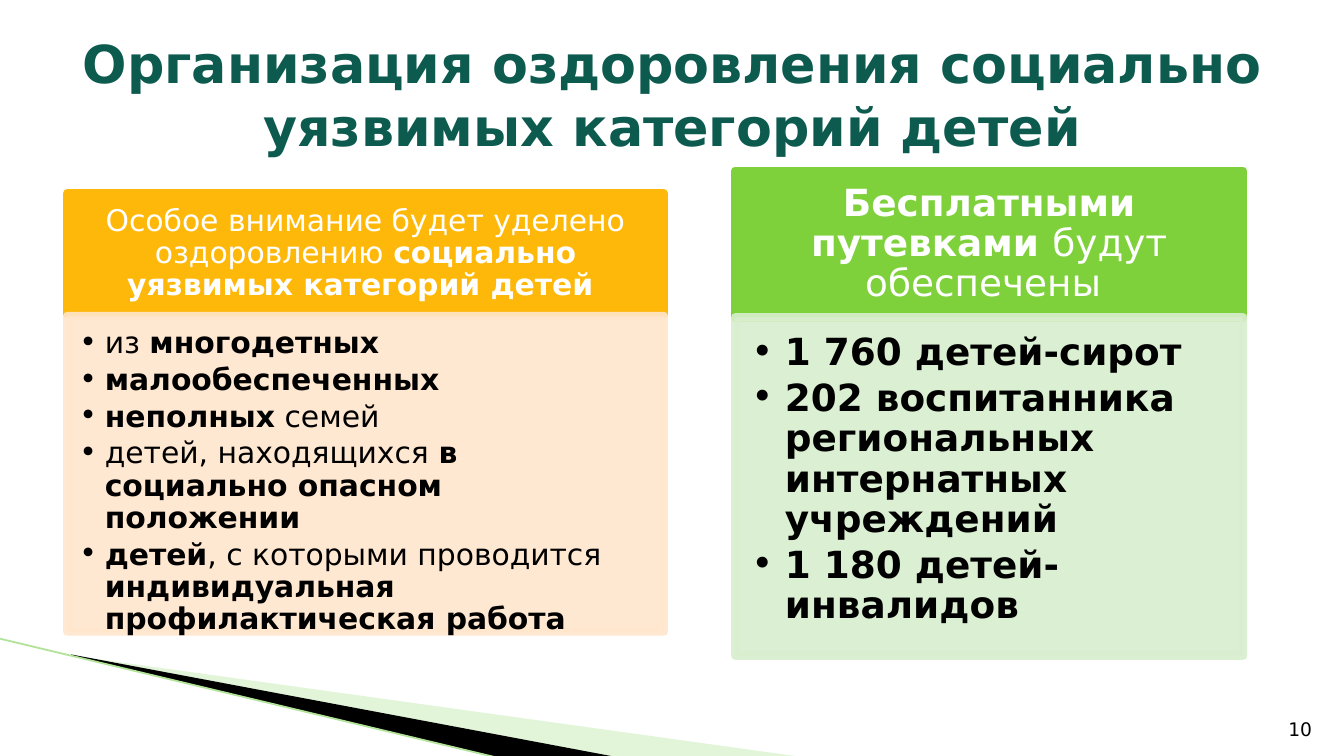
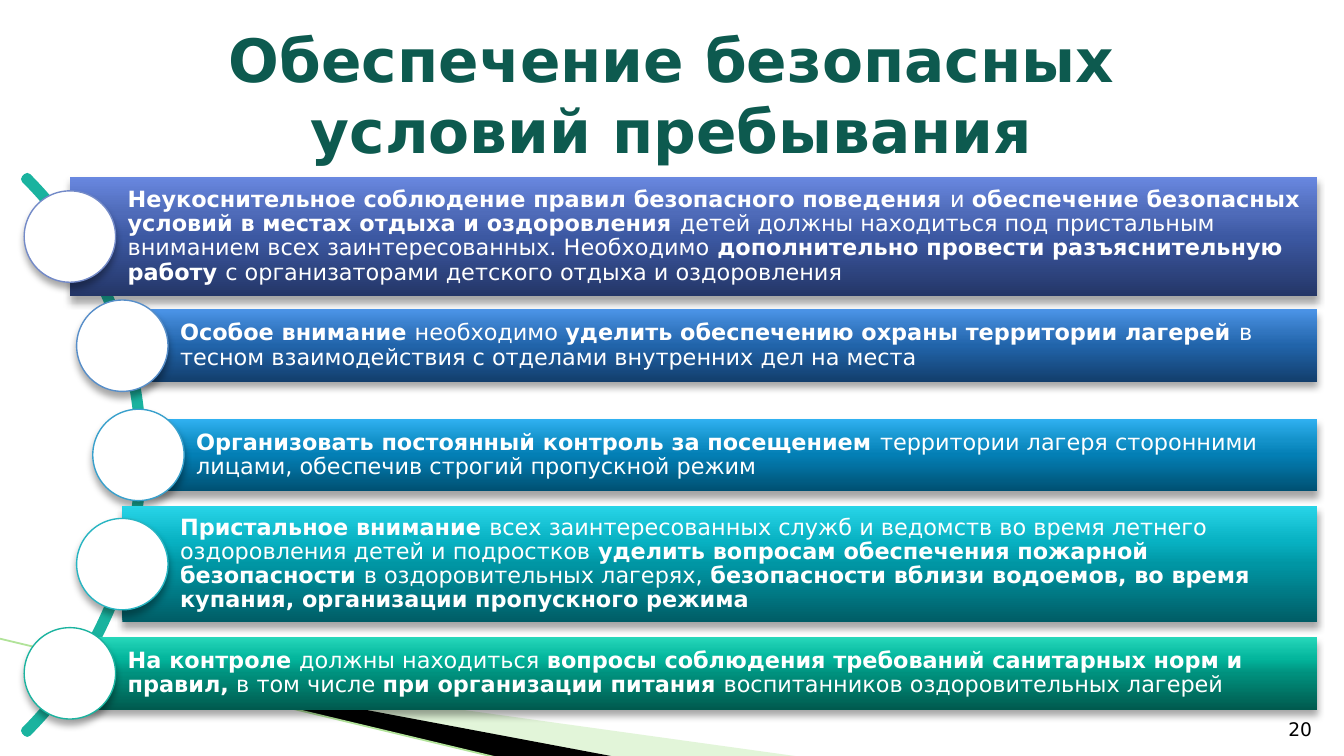
from lxml.etree import SubElement
from pptx import Presentation
from pptx.dml.color import RGBColor
from pptx.enum.shapes import MSO_CONNECTOR, MSO_SHAPE
from pptx.enum.text import MSO_ANCHOR, PP_ALIGN
from pptx.oxml.ns import qn
from pptx.util import Inches, Pt

FONT = "DejaVu Sans"
WHITE = RGBColor(0xFF, 0xFF, 0xFF)
BLACK = RGBColor(0x00, 0x00, 0x00)
TITLE_GREEN = RGBColor(0x0D, 0x5A, 0x4F)
WEDGE_GREEN = RGBColor(0xB8, 0xE7, 0xA1)
EDGE_GREEN = RGBColor(0xB1, 0xE3, 0x99)
ORANGE = RGBColor(0xFE, 0xB8, 0x0A)
PALE_ORANGE = RGBColor(0xFF, 0xE6, 0xCC)
GREEN = RGBColor(0x7F, 0xD1, 0x3B)
PALE_GREEN = RGBColor(0xD8, 0xEE, 0xCE)
ARC_TEAL = RGBColor(0x1A, 0xB3, 0x9F)

GRADIENT_STOPS = (0, 50, 70, 100)
PANEL_LINE = 4.33
BAR_RIGHT = 9.8
CIRCLE_SIZE = 0.68
FIRST_CENTER = 1.76
LAST_CENTER = 5.01

PANELS = [
    dict(
        left=0.5, width=4.44, size=16, indent=0.19,
        header_box=(1.44, 0.9), header_color=ORANGE,
        header_insets=(0.12, 0.07, 0.12, 0.07),
        header="Особое внимание будет уделено оздоровлению "
               "*социально уязвимых категорий детей *",
        body_box=(2.35, 2.35), body_color=PALE_ORANGE,
        body_insets=(0.09, 0.09, 0.12, 0.14),
        items=[
            "из *многодетных*",
            "*малообеспеченных*",
            "*неполных* семей",
            "детей, находящихся *в социально опасном положении*",
            "*детей*, с которыми проводится "
            "*индивидуальная профилактическая работа*",
        ],
    ),
    dict(
        left=5.47, width=3.78, size=20, indent=0.25,
        header_box=(1.27, 1.1), header_color=GREEN,
        header_insets=(0.16, 0.09, 0.16, 0.09),
        header="*Бесплатными путевками *будут обеспечены ",
        body_box=(2.36, 2.52), body_color=PALE_GREEN,
        body_insets=(0.12, 0.12, 0.16, 0.17),
        items=[
            "*1 760 детей-сирот*",
            "*202 воспитанника региональных интернатных учреждений*",
            "*1 180 детей-инвалидов*",
        ],
    ),
]

SAFETY_RULES = [
    (0.52, 0.89, "738AC8", ("243667", "3C58A2", "4F6BB9", "6988E0"),
     "*Неукоснительное соблюдение правил безопасного поведения *и "
     "*обеспечение безопасных условий в местах отдыха и оздоровления *"
     "детей должны находиться под пристальным вниманием всех "
     "заинтересованных. Необходимо *дополнительно провести "
     "разъяснительную работу *с организаторами детского отдыха и "
     "оздоровления"),
    (0.91, 0.54, "578EC9", ("123E6C", "2164AA", "3276C0", "4B94E7"),
     "*Особое внимание *необходимо *уделить обеспечению охраны "
     "территории лагерей *в тесном взаимодействия с отделами "
     "внутренних дел на места"),
    (1.03, 0.54, "38A0CC", ("005072", "037FB5", "1492CA", "30B1F1"),
     "*Организовать постоянный контроль за посещением *территории "
     "лагеря сторонними лицами, обеспечив строгий пропускной режим"),
    (0.91, 0.86, "27B5C2", ("005D66", "0096A4", "08B2C3", "28D4E7"),
     "*Пристальное внимание *всех заинтересованных служб и ведомств во "
     "время летнего оздоровления детей и подростков *уделить вопросам "
     "обеспечения пожарной безопасности *в оздоровительных лагерях, "
     "*безопасности вблизи водоемов, во время купания, организации "
     "пропускного режима*"),
    (0.52, 0.54, "1AB39F", ("005A4E", "00917E", "03B59C", "26D7BA"),
     "*На контроле *должны находиться *вопросы соблюдения требований "
     "санитарных норм и правил,* в том числе *при организации питания *"
     "воспитанников оздоровительных лагерей"),
]


def inches(*lengths):
    return [Inches(length) for length in lengths]


def set_opacity(element, percent):
    for color in element.iter(qn("a:srgbClr")):
        SubElement(color, qn("a:alpha"), val=str(percent * 1000))


def set_percent_after(paragraph, percent):
    paragraph.space_after = Pt(0)
    spacing = paragraph._p.pPr.find(qn("a:spcAft"))
    spacing.remove(spacing[0])
    SubElement(spacing, qn("a:spcPct"), val=str(percent * 1000))


def add_bullet(paragraph, indent):
    paragraph.level = 1
    properties = paragraph._p.get_or_add_pPr()
    properties.set("marL", str(Inches(indent)))
    properties.set("indent", str(-Inches(indent)))
    SubElement(properties, qn("a:buFont"), typeface=FONT)
    SubElement(properties, qn("a:buChar"), char="•")


def write_text(shape, *texts, size, color, align=PP_ALIGN.LEFT,
               anchor=MSO_ANCHOR.MIDDLE, insets=(0.1, 0.05, 0.1, 0.05),
               line_spacing=None, percent_after=None, indent=None):
    """Asterisks switch bold on and off."""
    frame = shape.text_frame
    frame.word_wrap = True
    frame.vertical_anchor = anchor
    (frame.margin_left, frame.margin_top,
     frame.margin_right, frame.margin_bottom) = inches(*insets)
    for index, text in enumerate(texts):
        paragraph = frame.add_paragraph() if index else frame.paragraphs[0]
        paragraph.alignment = align
        if line_spacing:
            paragraph.line_spacing = line_spacing
        if percent_after:
            set_percent_after(paragraph, percent_after)
        if indent:
            add_bullet(paragraph, indent)
        for position, part in enumerate(text.split("*")):
            if part:
                run = paragraph.add_run()
                run.text = part
                run.font.name = FONT
                run.font.size = Pt(size)
                run.font.bold = position % 2 == 1
                run.font.color.rgb = color


def add_text(slide, text, box, **text_format):
    write_text(slide.shapes.add_textbox(*inches(*box)), text, **text_format)


def add_preset(slide, preset, box, fill=None, line=None, line_width=1,
               opacity=None):
    shape = slide.shapes.add_shape(preset, *inches(*box))
    shape.shadow.inherit = False
    if fill is None:
        shape.fill.background()
    else:
        shape.fill.solid()
        shape.fill.fore_color.rgb = fill
    if line is None:
        shape.line.fill.background()
    else:
        shape.line.color.rgb = line
        shape.line.width = Pt(line_width)
    if opacity:
        set_opacity(shape._element.spPr, opacity)
    return shape


def add_gradient(shape, colors):
    shape.fill.gradient()
    gradient = shape._element.spPr.find(qn("a:gradFill"))
    stops = gradient.find(qn("a:gsLst"))
    for stop in list(stops):
        stops.remove(stop)
    for position, color in zip(GRADIENT_STOPS, colors):
        stop = SubElement(stops, qn("a:gs"), pos=str(position * 1000))
        SubElement(stop, qn("a:srgbClr"), val=color)
    gradient.find(qn("a:lin")).set("ang", str(270 * 60000))


def add_shadow(shape):
    effects = shape._element.spPr.find(qn("a:effectLst"))
    shadow = SubElement(effects, qn("a:outerShdw"), blurRad=str(Pt(4)),
                        dist=str(Pt(3)), dir=str(90 * 60000), rotWithShape="0")
    SubElement(shadow, qn("a:srgbClr"), val="000000")
    set_opacity(shadow, 35)


def add_wedge(slide, points, color, opacity=None):
    start, *others = [tuple(inches(*point)) for point in points]
    builder = slide.shapes.build_freeform(*start)
    builder.add_line_segments(others, close=True)
    wedge = builder.convert_to_shape()
    wedge.shadow.inherit = False
    wedge.fill.solid()
    wedge.fill.fore_color.rgb = color
    wedge.line.fill.background()
    if opacity:
        set_opacity(wedge._element.spPr, opacity)


def add_edge_line(slide):
    line = slide.shapes.add_connector(
        MSO_CONNECTOR.STRAIGHT, *inches(-0.01, 4.75, 3.71, 5.64))
    line.line.color.rgb = EDGE_GREEN
    line.line.width = Pt(0.95)
    SubElement(line._element.spPr, qn("a:effectLst"))


def add_base_slide(presentation, title, title_size, number):
    slide = presentation.slides.add_slide(presentation.slide_layouts[6])
    slide.background.fill.solid()
    slide.background.fill.fore_color.rgb = WHITE
    add_wedge(slide, [(0.55, 4.88), (5.95, 5.63), (4.56, 5.63)],
              WEDGE_GREEN, opacity=40)
    add_wedge(slide, [(0.53, 4.87), (4.57, 5.63), (3.72, 5.64), (0.54, 4.88)],
              BLACK)
    add_edge_line(slide)
    add_text(slide, f"*{title}*", (0.5, 0.23, 9, 0.94), size=title_size,
             color=TITLE_GREEN, align=PP_ALIGN.CENTER)
    add_text(slide, str(number), (9.46, 5.26, 0.4, 0.3), size=10, color=BLACK,
             align=PP_ALIGN.RIGHT, anchor=MSO_ANCHOR.BOTTOM)
    return slide


def add_panel(slide, left, width, size, indent, header_box, header_color,
              header_insets, header, body_box, body_color, body_insets, items):
    top, height = header_box
    heading = add_preset(slide, MSO_SHAPE.RECTANGLE, (left, top, width, height),
                         header_color, header_color, PANEL_LINE)
    write_text(heading, header, size=size, color=WHITE, align=PP_ALIGN.CENTER,
               insets=header_insets, line_spacing=0.9, percent_after=35)
    top, height = body_box
    body = add_preset(slide, MSO_SHAPE.RECTANGLE, (left, top, width, height),
                      body_color, body_color, PANEL_LINE, opacity=90)
    write_text(body, *items, size=size, color=BLACK, anchor=MSO_ANCHOR.TOP,
               insets=body_insets, line_spacing=0.9, percent_after=15,
               indent=indent)


def add_rule(slide, center, left, height, ring_color, gradient, text):
    bar = add_preset(slide, MSO_SHAPE.RECTANGLE,
                     (left, center - height / 2, BAR_RIGHT - left, height))
    add_gradient(bar, gradient)
    add_shadow(bar)
    write_text(bar, text, size=12, color=WHITE, insets=(0.43, 0.03, 0.03, 0.03),
               line_spacing=0.9, percent_after=35)
    radius = CIRCLE_SIZE / 2
    circle = add_preset(
        slide, MSO_SHAPE.OVAL,
        (left - radius, center - radius, CIRCLE_SIZE, CIRCLE_SIZE),
        WHITE, RGBColor.from_string(ring_color), 0.75)
    add_shadow(circle)


def add_arc(slide):
    arc = add_preset(slide, MSO_SHAPE.BLOCK_ARC, (-4.79, 0.46, 5.85, 5.85),
                     line=ARC_TEAL, line_width=PANEL_LINE)
    for index, value in enumerate((189, 27, 0.004)):
        arc.adjustments[index] = value


def main():
    presentation = Presentation()
    presentation.slide_width = Inches(10)
    presentation.slide_height = Inches(10) * 9 // 16

    slide = add_base_slide(
        presentation,
        "Организация оздоровления социально уязвимых категорий детей", 28, 10)
    for panel in PANELS:
        add_panel(slide, **panel)

    slide = add_base_slide(
        presentation, "Обеспечение безопасных условий пребывания", 32, 20)
    add_arc(slide)
    step = (LAST_CENTER - FIRST_CENTER) / (len(SAFETY_RULES) - 1)
    for index, rule in enumerate(SAFETY_RULES):
        add_rule(slide, FIRST_CENTER + index * step, *rule)

    presentation.save("out.pptx")


if __name__ == "__main__":
    main()
